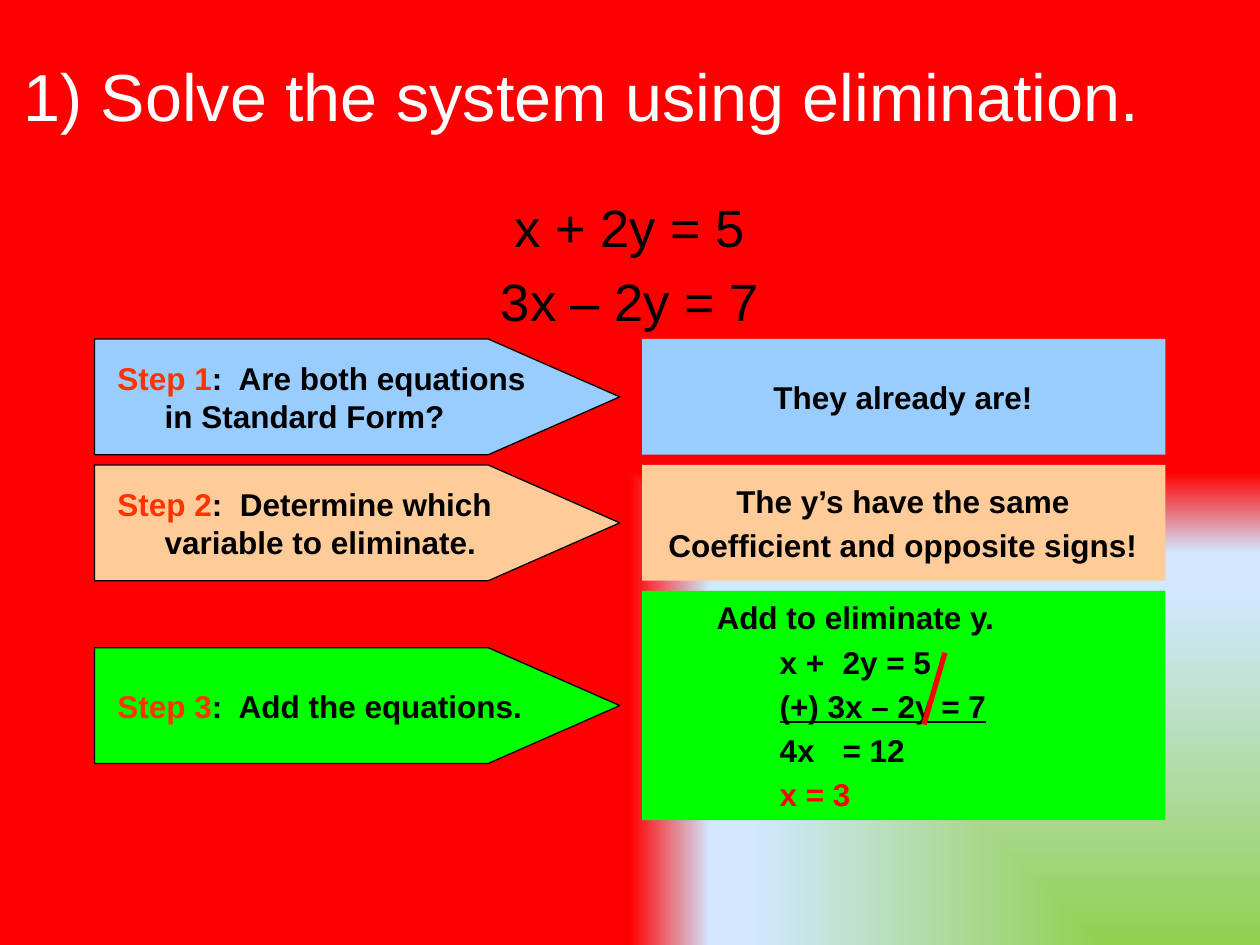
from lxml.etree import SubElement
from pptx import Presentation
from pptx.dml.color import RGBColor
from pptx.enum.shapes import MSO_CONNECTOR, MSO_SHAPE
from pptx.enum.text import MSO_ANCHOR, MSO_AUTO_SIZE, PP_ALIGN
from pptx.oxml import parse_xml
from pptx.oxml.ns import nsdecls, qn
from pptx.util import Pt

COLORS = {
    "white": "FFFFFF", "black": "000000", "step": "FF3300", "red": "FF0000",
    "blue": "99CCFF", "orange": "FFCC99", "green": "00FF00",
    "meadow": "92D050", "sky": "D1E8FF",
}
FONT = "Arial"
ARROW_LEFT, ARROW_WIDTH, ARROW_HEIGHT = 54, 300.2, 66.2
ANSWER_LEFT, ANSWER_WIDTH = 367, 299
FIRST_TOP, ROW_PITCH, TEXT_INSET = 193.7, 72, 6
HANGING = 27
BOLD = {"size": Pt(18), "bold": True}
SPACED = {"space_before": Pt(3.6)}
CENTERED = {"alignment": PP_ALIGN.CENTER, **SPACED}

STEPS = [
    {"color": "blue", "height": ARROW_HEIGHT, "name": "Step 1",
     "task": ":  Are both equations in Standard Form?",
     "answer": ["They already are!"]},
    {"color": "orange", "height": ARROW_HEIGHT, "name": "Step 2",
     "task": ":  Determine which variable to eliminate.",
     "answer": ["The y’s have the same", "Coefficient and opposite signs!"]},
    {"color": "green", "height": 131, "name": "Step 3",
     "task": ":  Add the equations.", "answer": None},
]
WORK_LINES = [
    ("Add to eliminate y.", [], {}),
    ("\tx +\t2y = 5", [60, 95.5], {}),
    ("\t(+) 3x – 2y = 7", [25], {"underline": True}),
    ("\t4x\t= 12", [55, 105], {}),
    ("\tx = 3", [95], {"color": "red"}),
]


def rgb(name):
    return RGBColor.from_string(COLORS[name])


def set_attributes(target, values):
    for name, value in values.items():
        setattr(target, name, value)


def place(box, left, top, width, height):
    bounds = {"left": left, "top": top, "width": width, "height": height}
    set_attributes(box, {name: Pt(value) for name, value in bounds.items()})


def add_span(para, text, color="black", **font):
    span = para.add_run()
    span.text = text
    set_attributes(span.font, {"name": FONT, **font})
    span.font.color.rgb = rgb(color)


def get_para(frame, index):
    return frame.paragraphs[0] if index == 0 else frame.add_paragraph()


def set_indent(para, left, first):
    properties = para._p.get_or_add_pPr()
    properties.set("marL", str(Pt(left)))
    properties.set("indent", str(Pt(first)))
    return properties


def write_lines(frame, lines, style, font):
    for index, line in enumerate(lines):
        para = get_para(frame, index)
        set_attributes(para, style)
        add_span(para, line, **font)


def set_background(page):
    page.background.fill.solid()
    solid = page.element.find(".//" + qn("p:bgPr") + "/" + qn("a:solidFill"))
    gradient = parse_xml(
        f'<a:gradFill {nsdecls("a")} rotWithShape="1"><a:gsLst/>'
        '<a:path path="rect"><a:fillToRect l="100000" t="100000"/></a:path>'
        '</a:gradFill>')
    stops = [(0, "meadow", 100), (74, "sky", 100), (83, "sky", 100), (100, "red", 52)]
    for position, name, opacity in stops:
        stop = SubElement(gradient[0], qn("a:gs"), pos=str(position * 1000))
        color = SubElement(stop, qn("a:srgbClr"), val=COLORS[name])
        if opacity < 100:
            SubElement(color, qn("a:alpha"), val=str(opacity * 1000))
    solid.getparent().replace(solid, gradient)


def fill_title(page):
    title = page.shapes.title
    place(title, 6, 18, 654, 72)
    set_attributes(title.text_frame, {
        "vertical_anchor": MSO_ANCHOR.MIDDLE, "auto_size": MSO_AUTO_SIZE.NONE})
    write_lines(title.text_frame, ["1) Solve the system using elimination."],
                {"alignment": PP_ALIGN.LEFT}, {"size": Pt(38), "color": "white"})


def fill_equations(page):
    body = page.placeholders[1]
    place(body, 48, 108, 624, 360)
    body.text_frame.auto_size = MSO_AUTO_SIZE.NONE
    write_lines(body.text_frame, ["x + 2y = 5", "3x – 2y = 7"],
                {"alignment": PP_ALIGN.CENTER, "space_before": Pt(6)}, {"size": Pt(30)})
    for para in body.text_frame.paragraphs:
        SubElement(set_indent(para, 0, 0), qn("a:buNone"))


def add_panel(page, kind, bounds, color):
    panel = page.shapes.add_shape(kind, *map(Pt, bounds))
    panel.shadow.inherit = False
    panel.fill.solid()
    panel.fill.fore_color.rgb = rgb(color)
    panel.line.fill.background()
    return panel


def add_text(page, *bounds):
    box = page.shapes.add_textbox(*map(Pt, bounds))
    set_attributes(box.text_frame, {
        "word_wrap": True, "vertical_anchor": MSO_ANCHOR.MIDDLE})
    return box.text_frame


def add_step(page, step, top):
    arrow_top = top + (step["height"] - ARROW_HEIGHT) / 2
    arrow = add_panel(page, MSO_SHAPE.PENTAGON,
                      (ARROW_LEFT, arrow_top, ARROW_WIDTH, ARROW_HEIGHT), step["color"])
    arrow.adjustments[0] = 1.136
    arrow.line.color.rgb = rgb("black")
    arrow.line.width = Pt(0.75)
    frame = add_text(page, ARROW_LEFT + TEXT_INSET, arrow_top + TEXT_INSET,
                     258, ARROW_HEIGHT - 2 * TEXT_INSET)
    para = frame.paragraphs[0]
    set_indent(para, HANGING, -HANGING)
    add_span(para, step["name"], "step", **BOLD)
    add_span(para, step["task"], **BOLD)


def add_answer(page, step, top):
    add_panel(page, MSO_SHAPE.RECTANGLE,
              (ANSWER_LEFT, top, ANSWER_WIDTH, step["height"]), step["color"])
    frame = add_text(page, ANSWER_LEFT + TEXT_INSET - 1, top + TEXT_INSET,
                     288, step["height"] - 2 * TEXT_INSET)
    if step["answer"]:
        write_lines(frame, step["answer"], CENTERED, BOLD)
    else:
        write_work(frame)


def write_work(frame):
    frame.margin_left = Pt(37.5)
    for index, (text, stops, font) in enumerate(WORK_LINES):
        para = get_para(frame, index)
        set_attributes(para, SPACED)
        tabs = SubElement(set_indent(para, 0, 0), qn("a:tabLst"))
        for stop in stops:
            SubElement(tabs, qn("a:tab"), pos=str(Pt(stop)), algn="l")
        add_span(para, text, **BOLD, **font)


def add_strike(page):
    strike = page.shapes.add_connector(
        MSO_CONNECTOR.STRAIGHT, Pt(540), Pt(373), Pt(528), Pt(414))
    strike.line.color.rgb = rgb("red")
    strike.line.width = Pt(3)
    SubElement(strike.element.spPr, qn("a:effectLst"))


def main():
    deck = Presentation()
    set_attributes(deck, {"slide_width": Pt(720), "slide_height": Pt(540)})
    page = deck.slides.add_slide(deck.slide_layouts[1])
    set_background(page)
    fill_title(page)
    fill_equations(page)
    for index, step in enumerate(STEPS):
        top = FIRST_TOP + index * ROW_PITCH
        add_step(page, step, top)
        add_answer(page, step, top)
    add_strike(page)
    deck.save("out.pptx")


if __name__ == "__main__":
    main()
